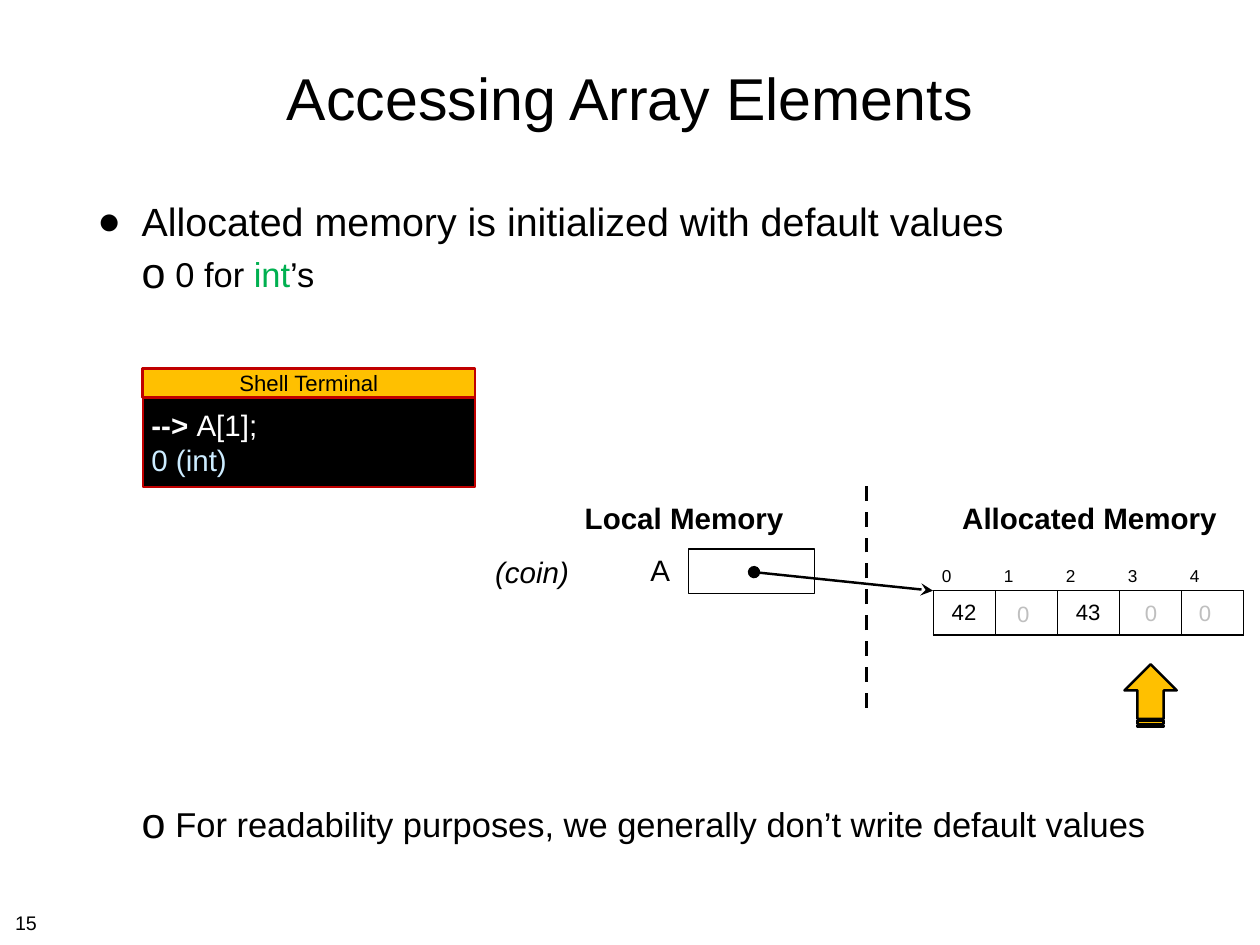
import pptx
import pptx.util
import pptx.dml.color
import pptx.enum.dml
import pptx.enum.shapes
import pptx.enum.text
import pptx.oxml
import pptx.oxml.ns
from lxml import etree

Inches = pptx.util.Inches
Pt = pptx.util.Pt
RGBColor = pptx.dml.color.RGBColor
Align = pptx.enum.text.PP_ALIGN
Anchor = pptx.enum.text.MSO_ANCHOR
Preset = pptx.enum.shapes.MSO_SHAPE
qn = pptx.oxml.ns.qn

BLACK = RGBColor(0x00, 0x00, 0x00)
WHITE = RGBColor(0xFF, 0xFF, 0xFF)
GREEN = RGBColor(0x00, 0xB0, 0x50)
GREY = RGBColor(0xBF, 0xBF, 0xBF)
GOLD = RGBColor(0xFF, 0xC0, 0x00)
RED = RGBColor(0xC0, 0x00, 0x00)
PALE_BLUE = RGBColor(0xCC, 0xEC, 0xFF)

FONT = "Arial"
CELL = 0.7
ROW = 0.5
ARRAY_LEFT, ARRAY_TOP = 10.53, 6.17
TERMINAL_LEFT, TERMINAL_TOP, TERMINAL_WIDTH = 1.61, 4.16, 3.75
TITLE_BAR, TERMINAL_BODY = 0.33, 1.01

TITLE = "Accessing Array Elements"
TERMINAL_TITLE = "Shell Terminal"
BULLETS = [
    ("●", 100, 0.5, 0.5, 8, 32,
     [("Allocated memory is initialized with default values", BLACK)]),
    ("o", 125, 0.88, 0.38, 7, 28,
     [("0 for ", BLACK), ("int", GREEN), ("’s", BLACK)]),
    ("o", 125, 0.88, 0.38, 413, 28,
     [("For readability purposes, we generally don’t write default values", BLACK)]),
]
LABELS = [
    ("Allocated Memory", (10.79, 5.58, 3.01, 0.52), 24, True, False, BLACK),
    ("Local Memory", (6.53, 5.58, 2.38, 0.52), 24, True, False, BLACK),
    ("A", (7.28, 6.17, 0.34, 0.52), 24, False, False, BLACK),
    ("(coin)", (5.48, 6.2, 1.05, 0.51), 24, False, True, BLACK),
    ("0", (11.36, 6.73, 0.38, 0.4), 18, False, False, GREY),
    ("0", (12.8, 6.72, 0.38, 0.4), 18, False, False, GREY),
    ("0", (13.41, 6.72, 0.38, 0.4), 18, False, False, GREY),
]
ARRAY = [["0", "1", "2", "3", "4"], ["42", "", "43", "", ""]]
TERMINAL = [
    [("--> ", WHITE, True), ("A[1];", WHITE, False)],
    [("0 (int)", PALE_BLUE, False)],
]


def style(font, size, color=BLACK, bold=False, italic=False):
    font.name = FONT
    font.size = Pt(size)
    font.color.rgb = color
    font.bold = bold
    font.italic = italic


def add_run(paragraph, text, size, color=BLACK, bold=False):
    run = paragraph.add_run()
    run.text = text
    style(run.font, size, color, bold)


def set_frame(frame, anchor, inset=0.06, wrap=True):
    frame.word_wrap = wrap
    frame.vertical_anchor = anchor
    frame.margin_left = frame.margin_right = Inches(inset)
    frame.margin_top = frame.margin_bottom = Inches(inset)


def add_text(slide, text, box, size, bold=False, italic=False, color=BLACK,
             align=Align.CENTER, anchor=Anchor.MIDDLE):
    shape = slide.shapes.add_textbox(*map(Inches, box))
    set_frame(shape.text_frame, anchor, wrap=False)
    shape.text_frame.text = text
    paragraph = shape.text_frame.paragraphs[0]
    paragraph.alignment = align
    style(paragraph.runs[0].font, size, color, bold, italic)


def add_block(slide, preset, box, fill, line, width):
    shape = slide.shapes.add_shape(preset, *map(Inches, box))
    shape.shadow.inherit = False
    if fill is None:
        shape.fill.background()
    else:
        shape.fill.solid()
        shape.fill.fore_color.rgb = fill
    shape.line.color.rgb = line
    shape.line.width = Pt(width)
    return shape


def add_line(slide, start, end, width):
    line = slide.shapes.add_connector(
        pptx.enum.shapes.MSO_CONNECTOR.STRAIGHT, *map(Inches, start + end))
    line.line.color.rgb = BLACK
    line.line.width = Pt(width)
    etree.SubElement(line._element.spPr, qn("a:effectLst"))
    return line


def set_bullet(paragraph, symbol, percent, left, hanging):
    properties = paragraph._p.get_or_add_pPr()
    properties.set("marL", str(Inches(left)))
    properties.set("indent", str(-Inches(hanging)))
    color = etree.SubElement(properties, qn("a:buClr"))
    etree.SubElement(color, qn("a:srgbClr"), val=str(BLACK))
    etree.SubElement(properties, qn("a:buSzPct"), val=str(percent * 1000))
    etree.SubElement(properties, qn("a:buFont"), typeface=FONT)
    etree.SubElement(properties, qn("a:buChar"), char=symbol)


def set_borders(cell, visible):
    properties = cell._tc.get_or_add_tcPr()
    for index, side in enumerate("LRTB"):
        border = etree.Element(qn("a:ln" + side), w=str(Pt(1)))
        if side in visible:
            fill = etree.SubElement(border, qn("a:solidFill"))
            etree.SubElement(fill, qn("a:srgbClr"), val=str(BLACK))
        else:
            etree.SubElement(border, qn("a:noFill"))
        properties.insert(index, border)


def add_bullets(slide):
    frame = slide.shapes.add_textbox(*map(Inches, (1.04, 2.17, 12.14, 7.54))).text_frame
    set_frame(frame, Anchor.TOP)
    for index, (symbol, percent, left, hanging, space, size, runs) in enumerate(BULLETS):
        paragraph = frame.add_paragraph() if index else frame.paragraphs[0]
        paragraph.space_before = Pt(space)
        set_bullet(paragraph, symbol, percent, left, hanging)
        for text, color in runs:
            add_run(paragraph, text, size, color)


def add_array(slide):
    columns = len(ARRAY[0])
    table = slide.shapes.add_table(
        len(ARRAY), columns, Inches(ARRAY_LEFT), Inches(ARRAY_TOP),
        Inches(columns * CELL), Inches(len(ARRAY) * ROW)).table
    table.first_row = table.horz_banding = False
    looks = [(14, Align.LEFT, Anchor.BOTTOM, "B"), (18, Align.CENTER, Anchor.MIDDLE, "LRTB")]
    for row, (values, (size, align, anchor, borders)) in enumerate(zip(ARRAY, looks)):
        for column, value in enumerate(values):
            cell = table.cell(row, column)
            cell.fill.background()
            cell.vertical_anchor = anchor
            set_borders(cell, borders)
            paragraph = cell.text_frame.paragraphs[0]
            paragraph.alignment = align
            if value:
                add_run(paragraph, value, size)


def add_terminal(slide):
    body = add_block(slide, Preset.RECTANGLE,
                     (TERMINAL_LEFT, TERMINAL_TOP + TITLE_BAR, TERMINAL_WIDTH, TERMINAL_BODY),
                     BLACK, RED, 1.5)
    set_frame(body.text_frame, Anchor.MIDDLE, 0.1)
    for index, runs in enumerate(TERMINAL):
        paragraph = body.text_frame.add_paragraph() if index else body.text_frame.paragraphs[0]
        paragraph.alignment = Align.LEFT
        for text, color, bold in runs:
            add_run(paragraph, text, 24, color, bold)
    bar = add_block(slide, Preset.RECTANGLE,
                    (TERMINAL_LEFT, TERMINAL_TOP, TERMINAL_WIDTH, TITLE_BAR), GOLD, RED, 2)
    set_frame(bar.text_frame, Anchor.MIDDLE, wrap=False)
    bar.text_frame.paragraphs[0].alignment = Align.CENTER
    add_run(bar.text_frame.paragraphs[0], TERMINAL_TITLE, 18)


def main():
    presentation = pptx.Presentation()
    presentation.slide_width = Inches(14.22)
    presentation.slide_height = Inches(10.67)
    slide = presentation.slides.add_slide(presentation.slide_layouts[6])
    add_text(slide, TITLE, (1.04, 0.28, 12.14, 1.64), 48)
    add_bullets(slide)
    add_block(slide, Preset.RECTANGLE, (7.77, 6.2, 1.42, 0.5), None, BLACK, 1)
    add_array(slide)
    pointer = add_line(slide, (8.51, 6.46), (ARRAY_LEFT, ARRAY_TOP + ROW), 2)
    outline = pointer.line._get_or_add_ln()
    for end, head in (("a:headEnd", "oval"), ("a:tailEnd", "stealth")):
        etree.SubElement(outline, qn(end), type=head, w="lg", len="lg")
    add_terminal(slide)
    divider = add_line(slide, (9.78, 7.99), (9.78, 5.41), 3)
    divider.line.dash_style = pptx.enum.dml.MSO_LINE.DASH
    for text, box, size, bold, italic, color in LABELS:
        add_text(slide, text, box, size, bold, italic, color)
    add_text(slide, "15", (0.11, 10.23, 0.37, 0.35), 16, align=Align.LEFT, anchor=Anchor.TOP)
    arrow = add_block(slide, Preset.STRIPED_RIGHT_ARROW, (12.63, 7.56, 0.71, 0.59), GOLD, BLACK, 2)
    arrow.rotation = 270
    presentation.save("out.pptx")


if __name__ == "__main__":
    main()
